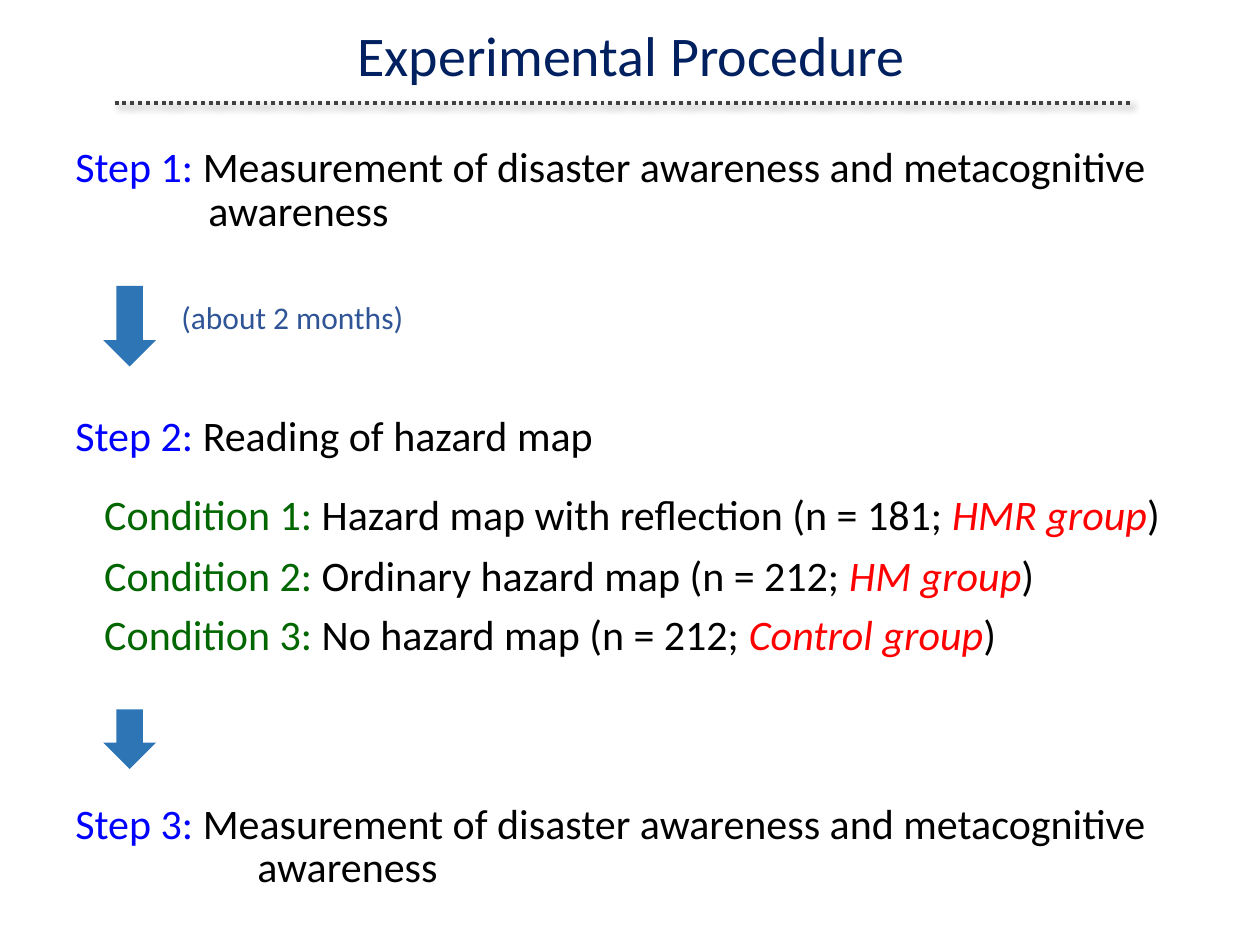
from lxml.etree import SubElement
from pptx import Presentation
from pptx.dml.color import RGBColor
from pptx.enum.dml import MSO_LINE
from pptx.enum.shapes import MSO_CONNECTOR, MSO_SHAPE
from pptx.enum.text import MSO_ANCHOR, PP_ALIGN
from pptx.oxml.ns import qn
from pptx.util import Pt

FONT = "Calibri"
NAVY, BLUE, GREEN, RED, BLACK = "002060", "0000FF", "006600", "FF0000", "000000"
ARROW_BLUE, NOTE_BLUE, RULE_GREY = "2E75B6", "2F5597", "404040"
LEFT, STEP_W = 36, 664.5
STEPS = [
    (80.6, "Step 1:", ["Measurement of disaster awareness and metacognitive", "awareness"], 76),
    (234, "Step 2:", ["Reading of hazard map"], 0),
    (455.8, "Step 3:", ["Measurement of disaster awareness and metacognitive", "awareness"], 104),
]
CONDITIONS = [
    (275.8, 623, "Hazard map with reflection (n = 181; ", "HMR group"),
    (310.3, 551, "Ordinary hazard map (n = 212; ", "HM group"),
    (344.2, 529, "No hazard map (n = 212; ", "Control group"),
]
ARROWS = [(163.4, 46), (405.4, 34)]


def rgb(color):
    """Turn a hex string into a colour."""
    return RGBColor.from_string(color)


def add_box(s, x, y, w, h, wrap=True):
    """Add an empty text box and return its text frame."""
    tf = s.shapes.add_textbox(Pt(x), Pt(y), Pt(w), Pt(h)).text_frame
    tf.word_wrap = wrap
    return tf


def add_runs(p, size, *runs):
    """Fill a paragraph with (text, colour) runs; red runs are italic."""
    p.font.name, p.font.size = FONT, Pt(size)
    for text, color in runs:
        r = p.add_run()
        r.text = text
        r.font.color.rgb = rgb(color)
        if color == RED:
            r.font.italic = True


def add_title(s, x, y, w, h):
    """Place the centred heading."""
    tf = add_box(s, x, y, w, h)
    tf.vertical_anchor = MSO_ANCHOR.MIDDLE
    p = tf.paragraphs[0]
    p.alignment, p.line_spacing = PP_ALIGN.CENTER, 0.9
    add_runs(p, 32, ("Experimental Procedure", NAVY))


def add_rule(s, x, y, w):
    """Draw the dotted rule with its soft shadow."""
    rule = s.shapes.add_connector(MSO_CONNECTOR.STRAIGHT, Pt(x), Pt(y), Pt(x + w), Pt(y))
    rule.line.color.rgb = rgb(RULE_GREY)
    rule.line.width = Pt(2.25)
    rule.line.dash_style = MSO_LINE.ROUND_DOT
    effects = SubElement(rule._element.spPr, qn("a:effectLst"))
    shadow = SubElement(effects, qn("a:outerShdw"), blurRad=str(Pt(4)), dist=str(Pt(3)),
                        dir="2700000", algn="tl", rotWithShape="0")
    color = SubElement(shadow, qn("a:srgbClr"), val=BLACK)
    SubElement(color, qn("a:alpha"), val="40000")


def add_step(s, x, y, w, label, lines, indent):
    """Place a step: label and first line, then indented further lines."""
    tf = add_box(s, x, y, w, 7.2 + 25 * len(lines))
    p = tf.paragraphs[0]
    p.line_spacing = Pt(25)
    add_runs(p, 24, (label, BLUE), (" " + lines[0], BLACK))
    for line in lines[1:]:
        p = tf.add_paragraph()
        p.line_spacing = Pt(25)
        p._p.get_or_add_pPr().set("marL", str(Pt(indent)))
        add_runs(p, 24, (line, BLACK))


def add_condition(s, x, y, w, number, text, group):
    """Place one condition with its group name in red."""
    tf = add_box(s, x, y, w, 36.4, wrap=False)
    add_runs(tf.paragraphs[0], 24, (f"Condition {number}:", GREEN), (" " + text, BLACK),
             (group, RED), (")", BLACK))


def add_arrow(s, x, y, w, h):
    """Draw a plain down arrow."""
    sp = s.shapes.add_shape(MSO_SHAPE.DOWN_ARROW, Pt(x), Pt(y), Pt(w), Pt(h))
    sp.shadow.inherit = False
    sp.fill.solid()
    sp.fill.fore_color.rgb = rgb(ARROW_BLUE)
    sp.line.fill.background()


def main():
    """Build the slide and save it."""
    prs = Presentation()
    prs.slide_width, prs.slide_height = Pt(720), Pt(540)
    s = prs.slides.add_slide(prs.slide_layouts[6])
    add_title(s, LEFT, -18.7, 649.4, 104.4)
    add_rule(s, 65.5, 59, 580.3)
    for y, label, lines, indent in STEPS:
        add_step(s, LEFT, y, STEP_W, label, lines, indent)
    for number, (y, w, text, group) in enumerate(CONDITIONS, 1):
        add_condition(s, 52.5, y, w, number, text, group)
    note = add_box(s, 96.5, 167, 143.3, 29, wrap=False)
    add_runs(note.paragraphs[0], 18, ("(about 2 months)", NOTE_BLUE))
    for y, h in ARROWS:
        add_arrow(s, 59, y, 30.2, h)
    prs.save("out.pptx")


if __name__ == "__main__":
    main()
